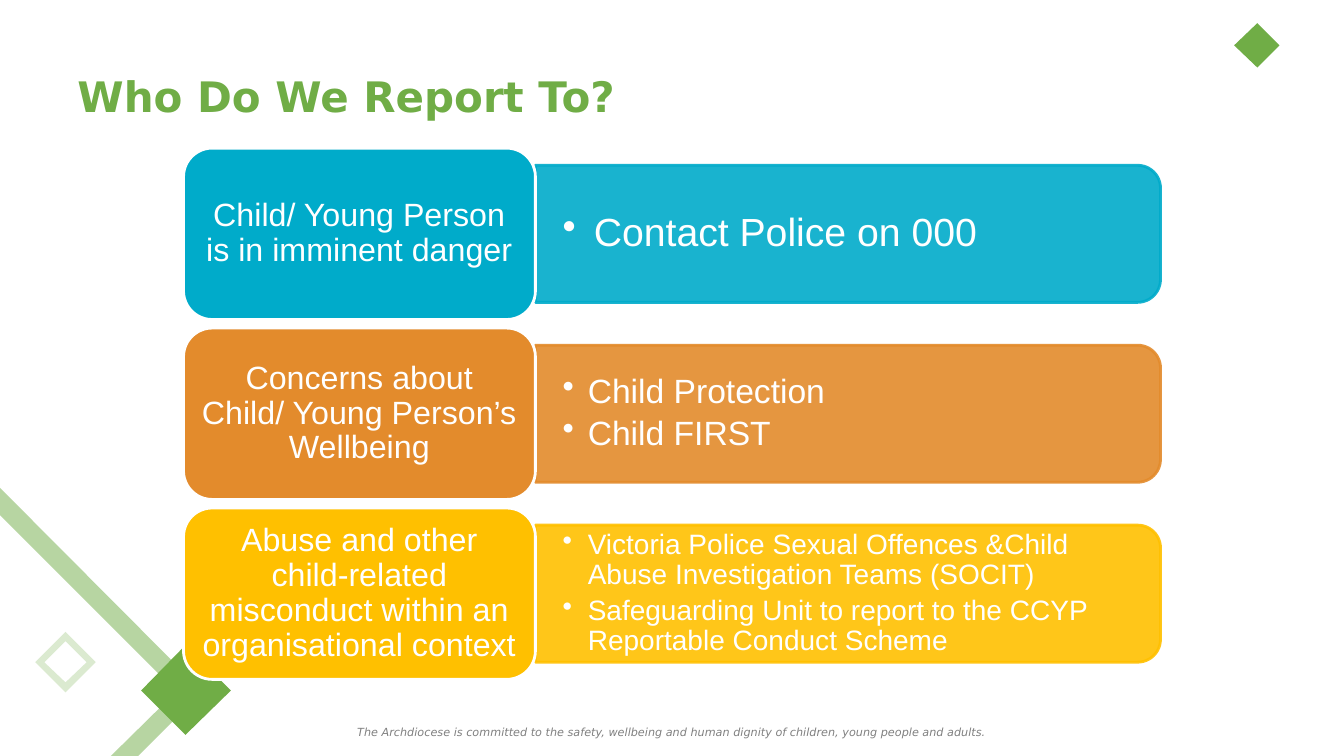
"""Build the slide that says who to report child safety concerns to."""
import pptx
import pptx.dml.color
import pptx.enum.shapes
import pptx.enum.text
import pptx.oxml.ns
import pptx.util
import lxml.etree

Inches = pptx.util.Inches
Pt = pptx.util.Pt
SHAPES = pptx.enum.shapes.MSO_SHAPE
ALIGN = pptx.enum.text.PP_ALIGN
qn = pptx.oxml.ns.qn
GREEN, WHITE, GREY = "70AD46", "FFFFFF", "808080"


def paint(fill, color, opacity=100):
    fill.solid()
    fill.fore_color.rgb = pptx.dml.color.RGBColor.from_string(color)
    if opacity < 100:
        tone = fill._xPr.find(qn("a:solidFill"))[0]
        lxml.etree.SubElement(tone, qn("a:alpha"), val=str(opacity * 1000))


def write(shape, lines, size, color=WHITE, font="Arial", bold=False, italic=False,
          align=ALIGN.LEFT, margins=(0.1, 0.05), spacing=1.0, hanging=0):
    frame = shape.text_frame
    frame.word_wrap = True
    frame.vertical_anchor = pptx.enum.text.MSO_ANCHOR.MIDDLE
    frame.margin_left = frame.margin_right = Inches(margins[0])
    frame.margin_top = frame.margin_bottom = Inches(margins[1])
    for index, line in enumerate(lines):
        paragraph = frame.paragraphs[0] if index == 0 else frame.add_paragraph()
        if hanging:
            properties = paragraph._p.get_or_add_pPr()
            properties.set("marL", str(Inches(hanging)))
            properties.set("indent", str(-Inches(hanging)))
            lxml.etree.SubElement(properties, qn("a:buChar"), char="•")
            paragraph.space_after = Pt(4)
        paragraph.alignment = align
        paragraph.line_spacing = spacing
        run = paragraph.add_run()
        run.text = line
        run.font.name = font
        run.font.size = Pt(size)
        run.font.bold = bold
        run.font.italic = italic
        paint(run.font.fill, color)


deck = pptx.Presentation()
deck.slide_width, deck.slide_height = Inches(13.33), Inches(7.5)
slide = deck.slides.add_slide(deck.slide_layouts[6])
shapes = slide.shapes

footer = shapes.add_textbox(Inches(0), Inches(7.14), Inches(13.33), Inches(0.24))
write(footer, ["The Archdiocese is committed to the safety, wellbeing and human dignity "
               "of children, young people and adults."],
      8, GREY, "DejaVu Sans", italic=True, align=ALIGN.CENTER)

ornaments = [
    (25, [[(0.65, 6.36), (0.86, 6.57), (0.65, 6.77), (0.44, 6.57)],
          [(0.65, 6.27), (0.35, 6.57), (0.65, 6.87), (0.95, 6.57)]]),
    (100, [[(1.84, 6.4), (1.4, 6.85), (1.84, 7.29), (2.29, 6.85)]]),
    (100, [[(12.47, 0.23), (12.24, 0.45), (12.47, 0.67), (12.69, 0.45)]]),
    (50, [[(0, 4.84), (0, 5.11), (1.75, 6.86), (1.1, 7.5), (1.37, 7.5), (2.01, 6.86)]]),
]
for opacity, contours in ornaments:
    outlines = [[(Inches(x), Inches(y)) for x, y in contour] for contour in contours]
    builder = shapes.build_freeform(*outlines[0][0], scale=1.0)
    builder.add_line_segments(outlines[0][1:], close=True)
    for outline in outlines[1:]:
        builder.move_to(*outline[0])
        builder.add_line_segments(outline[1:], close=True)
    ornament = builder.convert_to_shape()
    ornament.shadow.inherit = False
    paint(ornament.fill, GREEN, opacity)
    ornament.line.fill.background()

title = shapes.add_textbox(Inches(0.67), Inches(0.44), Inches(12), Inches(1.02))
write(title, ["Who Do We Report To?"], 30, GREEN, "DejaVu Sans", bold=True)

situations = [
    ("00ABCA", "Child/ Young Person is in imminent danger",
     ["Contact Police on 000"], 28, 0.31),
    ("E38B2C", "Concerns about Child/ Young Person’s Wellbeing",
     ["Child Protection", "Child FIRST"], 24, 0.25),
    ("FFC000", "Abuse and other child-related misconduct within an organisational context",
     ["Victoria Police Sexual Offences &Child Abuse Investigation Teams (SOCIT)",
      "Safeguarding Unit to report to the CCYP Reportable Conduct Scheme"], 20, 0.25),
]
for row, (color, situation, contacts, size, hanging) in enumerate(situations):
    middle = 2.32 + row * 1.785

    panel = shapes.add_shape(SHAPES.ROUND_2_SAME_RECTANGLE, Inches(7.73),
                             Inches(middle - 3.1), Inches(1.36), Inches(6.2))
    panel.rotation = 90
    panel.shadow.inherit = False
    paint(panel.fill, color, 90)
    paint(panel.line.fill, color, 90)
    panel.line.width = Pt(2)

    contact_list = shapes.add_textbox(Inches(5.31), Inches(middle - 0.615),
                                      Inches(6.13), Inches(1.23))
    write(contact_list, contacts, size, margins=(0.27, 0.14), spacing=0.9, hanging=hanging)

    card = shapes.add_shape(SHAPES.ROUNDED_RECTANGLE, Inches(1.82),
                            Inches(middle - 0.85), Inches(3.49), Inches(1.7))
    card.shadow.inherit = False
    paint(card.fill, color)
    paint(card.line.fill, WHITE)
    card.line.width = Pt(2)
    write(card, [situation], 23, align=ALIGN.CENTER, spacing=0.9)

deck.save("out.pptx")
